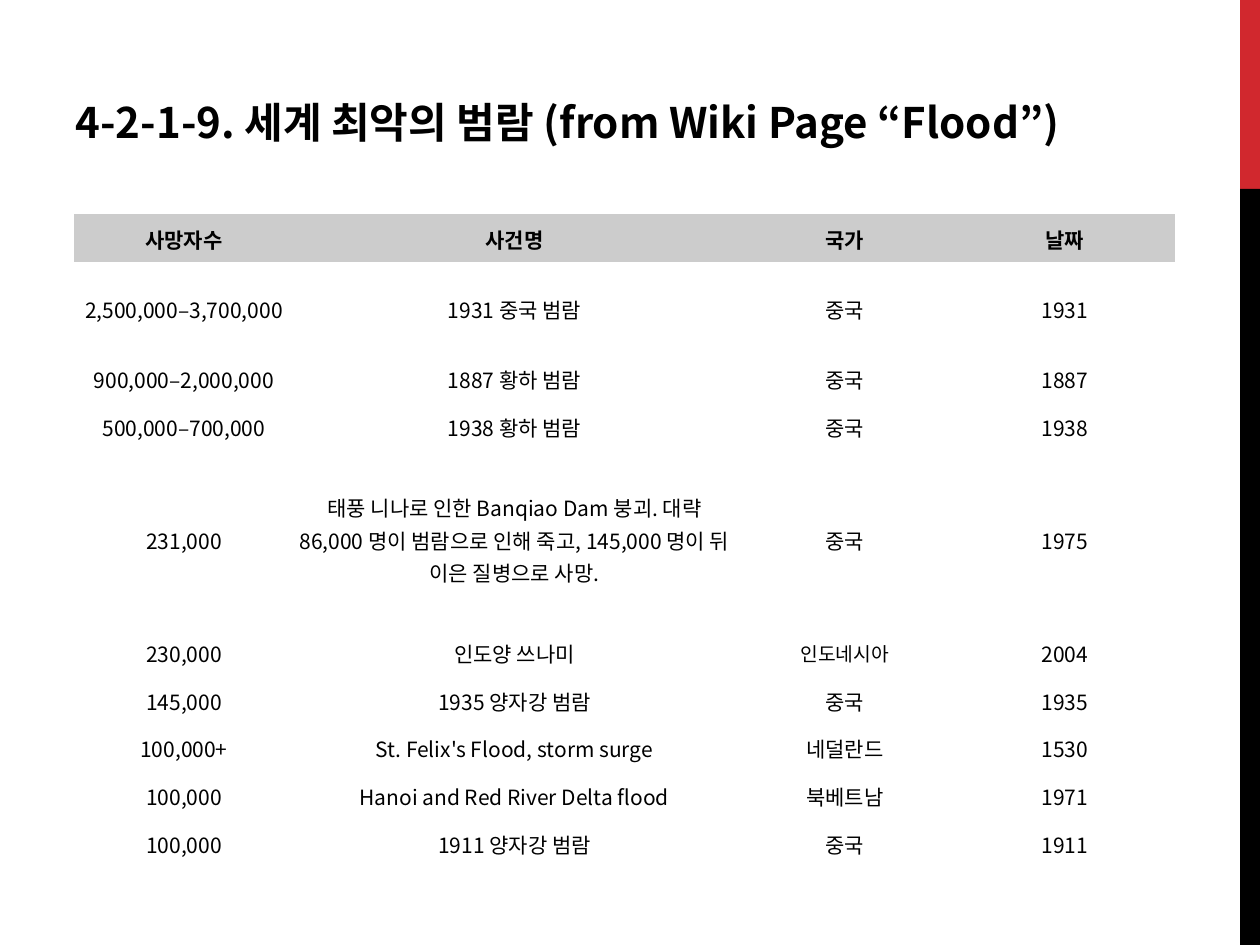
"""Builds a slide with a table of the deadliest floods."""
import lxml.etree
import pptx
import pptx.dml.color
import pptx.enum.shapes
import pptx.enum.text
import pptx.oxml.ns
import pptx.util

COLORS = {"text": "000000", "accent": "D1282E", "bar": "000000", "header": "CCCCCC"}
FONT = "Noto Sans CJK KR"
PLAIN_TABLE_STYLE = "{2D5ABB26-0587-4C30-8999-92F81FD0307C}"
TITLE = "4-2-1-9. 세계 최악의 범람 (from Wiki Page “Flood”)"
COLUMN_WIDTHS = [220, 441, 220, 220]
ROW_HEIGHT = 48
TALL_ROWS = {1: 92, 4: 178}
SMALL_TEXT = "인도네시아"
FLOODS = [
    ("사망자수", "사건명", "국가", "날짜"),
    ("2,500,000–3,700,000", "1931 중국 범람", "중국", "1931"),
    ("900,000–2,000,000", "1887 황하 범람", "중국", "1887"),
    ("500,000–700,000", "1938 황하 범람", "중국", "1938"),
    ("231,000",
     "태풍 니나로 인한 Banqiao Dam 붕괴. 대략 86,000 명이 범람으로 인해 죽고, "
     "145,000 명이 뒤 이은 질병으로 사망.",
     "중국", "1975"),
    ("230,000", "인도양 쓰나미", SMALL_TEXT, "2004"),
    ("145,000", "1935 양자강 범람", "중국", "1935"),
    ("100,000+", "St. Felix's Flood, storm surge", "네덜란드", "1530"),
    ("100,000", "Hanoi and Red River Delta flood", "북베트남", "1971"),
    ("100,000", "1911 양자강 범람", "중국", "1911"),
]


def px(length):
    return pptx.util.Emu(round(length * 914400 / 126))


def rgb(name):
    return pptx.dml.color.RGBColor.from_string(COLORS[name])


class SlideBuilder:
    def __init__(self, slide):
        self.slide = slide

    def style(self, paragraph, size, bold, alignment):
        paragraph.alignment = alignment
        font = paragraph.font
        font.size = pptx.util.Pt(size)
        font.bold = bold
        font.color.rgb = rgb("text")
        font.name = FONT
        properties = paragraph._p.pPr.find(pptx.oxml.ns.qn("a:defRPr"))
        east_asian = lxml.etree.SubElement(properties, pptx.oxml.ns.qn("a:ea"))
        east_asian.set("typeface", FONT)

    def title(self, text, left, top, width, height):
        shape = self.slide.shapes.title
        shape.left, shape.top = px(left), px(top)
        shape.width, shape.height = px(width), px(height)
        frame = shape.text_frame
        frame.text = text
        frame.word_wrap = True
        frame.auto_size = pptx.enum.text.MSO_AUTO_SIZE.NONE
        frame.vertical_anchor = pptx.enum.text.MSO_ANCHOR.TOP
        frame.margin_top = frame.margin_bottom = 0
        self.style(frame.paragraphs[0], 24, True, pptx.enum.text.PP_ALIGN.LEFT)

    def bar(self, color, left, top, width, height):
        shape = self.slide.shapes.add_shape(
            pptx.enum.shapes.MSO_SHAPE.RECTANGLE, px(left), px(top), px(width), px(height))
        shape.shadow.inherit = False
        shape.fill.solid()
        shape.fill.fore_color.rgb = rgb(color)
        shape.line.fill.background()

    def cell(self, cell, text, is_header):
        cell.text = text
        cell.vertical_anchor = pptx.enum.text.MSO_ANCHOR.MIDDLE
        cell.margin_left = cell.margin_right = px(1)
        cell.margin_top = cell.margin_bottom = px(1)
        if is_header:
            cell.fill.solid()
            cell.fill.fore_color.rgb = rgb("header")
        else:
            cell.fill.background()
        paragraph = cell.text_frame.paragraphs[0]
        paragraph.line_spacing = 1.07
        size = 11 if text == SMALL_TEXT else 12
        self.style(paragraph, size, is_header, pptx.enum.text.PP_ALIGN.CENTER)

    def table(self, rows, left, top):
        heights = [TALL_ROWS.get(index, ROW_HEIGHT) for index in range(len(rows))]
        table = self.slide.shapes.add_table(
            len(rows), len(COLUMN_WIDTHS), px(left), px(top),
            px(sum(COLUMN_WIDTHS)), px(sum(heights))).table
        table.first_row = table.horz_banding = False
        style_id = table._tbl.tblPr.find(pptx.oxml.ns.qn("a:tableStyleId"))
        style_id.text = PLAIN_TABLE_STYLE
        for column, width in zip(table.columns, COLUMN_WIDTHS):
            column.width = px(width)
        for row_index, (row, height, texts) in enumerate(zip(table.rows, heights, rows)):
            row.height = px(height)
            for cell, text in zip(row.cells, texts):
                self.cell(cell, text, row_index == 0)


def main():
    presentation = pptx.Presentation()
    presentation.slide_width, presentation.slide_height = px(1260), px(945)
    builder = SlideBuilder(presentation.slides.add_slide(presentation.slide_layouts[5]))
    builder.bar("accent", 1240, 0, 20, 189)
    builder.bar("bar", 1240, 189, 20, 756)
    builder.title(TITLE, 63, 96, 1100, 62)
    builder.table(FLOODS, 74, 214)
    presentation.save("out.pptx")


if __name__ == "__main__":
    main()
